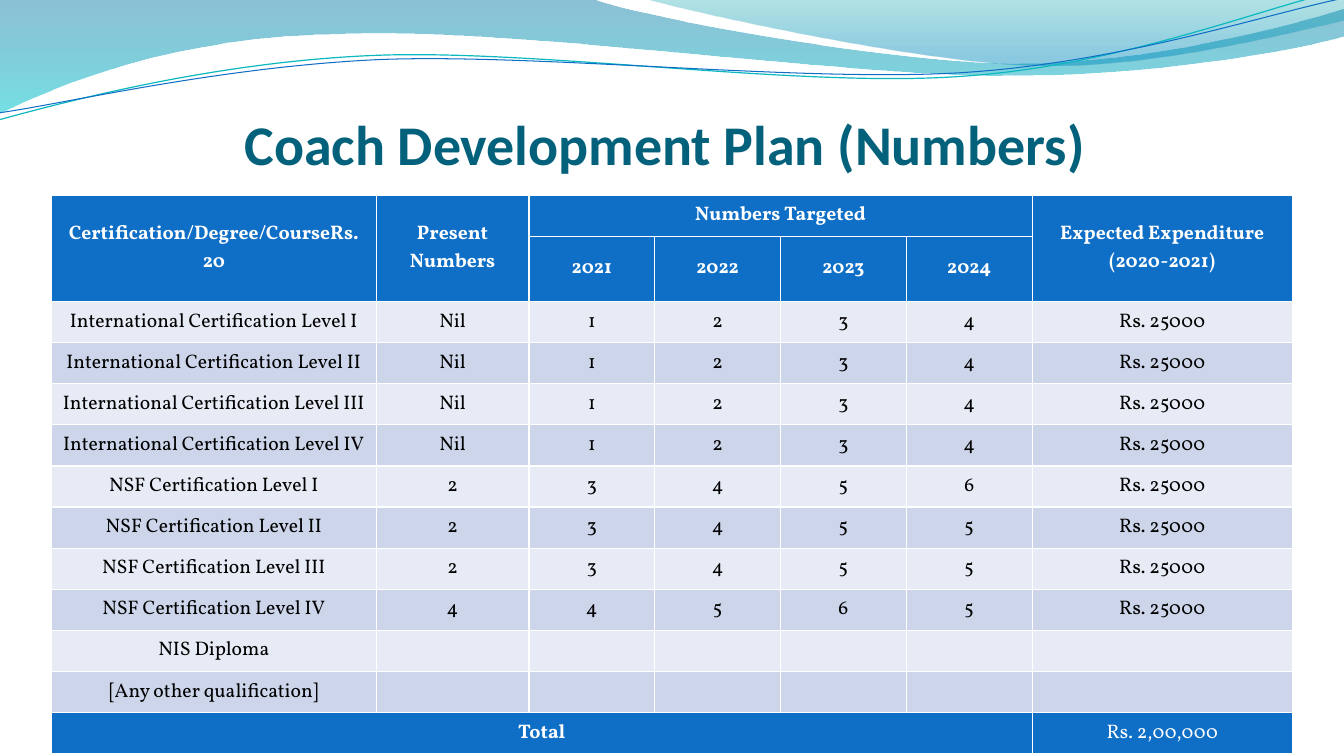
import math
import pptx
import pptx.util
import pptx.dml.color
import pptx.enum.text
import pptx.oxml.ns
import lxml.etree

Cm, Pt = pptx.util.Cm, pptx.util.Pt
qn = pptx.oxml.ns.qn
ANCHOR = pptx.enum.text.MSO_ANCHOR

# Content
TITLE = "Coach Development Plan (Numbers)"
HEAD = ["Certification/Degree/CourseRs. 20", "Present Numbers", "Numbers Targeted",
        "", "", "", "Expected Expenditure\v(2020-2021)"]
YEARS = ["", "", "2021", "2022", "2023", "2024", ""]
COST = "Rs. 25000"
LEVELS = ["I", "II", "III", "IV"]
COUNTS = {
    "International": ["Nil 1 2 3 4"] * 4,
    "NSF": ["2 3 4 5 6", "2 3 4 5 5", "2 3 4 5 5", "4 4 5 6 5"],
}
OTHER = ["NIS Diploma", "[Any other qualification]"]
TOTAL = ["Total", "", "", "", "", "", "Rs. 2,00,000"]

BLUE, WHITE, BLACK, TEAL = "0F6FC6", "FFFFFF", "000000", "04617B"
BANDS = ["E7EBF5", "CCD5EA"]
COLS = [8.18, 3.85, 3.17, 3.17, 3.17, 3.17, 6.56]
ROW, YEAR_ROW = 13.47 / 13, 1.64

# Waves in cm: a start, then line ends (2 numbers) or curves (6 numbers)
FILLS = [
    ([(0, 0), (14.91, -0.03), (16.1, 0.43, 22.48, 1.6, 25.68, 1.6),
      (28.91, 1.6, 32.46, 0.66, 33.86, 0.23), (33.91, 0.91),
      (33.3, 1.12, 29.46, 1.93, 25.25, 1.91), (21.06, 1.91, 12.93, 0.71, 8.71, 0.86),
      (4.37, 0.91, 1.55, 2.11, -0.03, 2.87), (0, 0)],
     [(0, "0074A1", 45), (1, "00C6CF", 55)]),
    ([(16.23, -0.03), (17.25, 0.28, 23.09, 1.57, 26.04, 1.65),
      (28.98, 1.75, 32.56, 0.81, 33.86, 0.53), (33.86, 0), (16.23, -0.03)],
     [(0, "00A1A9", 30), (0.8, "008BBF", 45)]),
]
TILT = -2.7
LINES = [
    ([(-0.03, 3.02), (1.63, 2.57, 5.36, 1.57, 9.37, 1.4),
      (13.39, 1.22, 20.07, 2.21, 24.13, 1.93), (28.19, 1.68, 31.8, 0.2, 33.81, -0.25)],
     (16.89, 1.46), "0AB8BF", 0.85),
    ([(0, 2.84), (1.6, 2.62, 5.54, 1.68, 9.6, 1.5),
      (13.64, 1.35, 20.22, 2.08, 24.26, 1.83), (28.32, 1.57, 31.88, 0.36, 33.88, -0.05)],
     (16.94, 1.5), BLUE, 0.75),
]


def rgb(code):
    return pptx.dml.color.RGBColor.from_string(code)


def write(frame, text, font="Vollkorn", size=14, color=BLACK, bold=False, before=0, after=0):
    para = frame.paragraphs[0]
    para.text = text
    para.alignment = pptx.enum.text.PP_ALIGN.CENTER
    para.space_before, para.space_after = Pt(before), Pt(after)
    for run in para.runs:
        run.font.name, run.font.size, run.font.bold = font, Pt(size), bold
        run.font.color.rgb = rgb(color)


def turn(steps, mid, angle):
    """Rotate each point of the steps around mid."""
    cos, sin = math.cos(math.radians(angle)), math.sin(math.radians(angle))
    done = []
    for step in steps:
        spots = []
        for x, y in zip(step[::2], step[1::2]):
            dx, dy = x - mid[0], y - mid[1]
            spots += [mid[0] + dx * cos - dy * sin, mid[1] + dx * sin + dy * cos]
        done.append(tuple(spots))
    return done


def wave(shapes, steps, close):
    """Lay out all points as lines, then join each three of a curve."""
    points = [(Cm(x), Cm(y)) for step in steps for x, y in zip(step[::2], step[1::2])]
    pen = shapes.build_freeform(*points[0], scale=1.0)
    pen.add_line_segments(points[1:], close=close)
    shape = pen.convert_to_shape()
    shape.shadow.inherit = False
    parts = iter(list(shape._element.iter(qn("a:lnTo"))))
    for step in steps[1:]:
        first = next(parts)
        if len(step) == 6:
            curve = lxml.etree.Element(qn("a:cubicBezTo"))
            first.addprevious(curve)
            for part in (first, next(parts), next(parts)):
                curve.append(part[0])
                part.getparent().remove(part)
    return shape


def paint(cell, color):
    cell.fill.solid()
    cell.fill.fore_color.rgb = rgb(color)
    props = cell._tc.get_or_add_tcPr()
    for i, side in enumerate(["a:lnL", "a:lnR", "a:lnT", "a:lnB"]):
        line = lxml.etree.Element(qn(side), w=str(Pt(1)))
        solid = lxml.etree.SubElement(line, qn("a:solidFill"))
        lxml.etree.SubElement(solid, qn("a:srgbClr"), val=WHITE)
        props.insert(i, line)


deck = pptx.Presentation()
deck.slide_width, deck.slide_height = Cm(33.87), Cm(19.05)
slide = deck.slides.add_slide(deck.slide_layouts[5])
shapes = slide.shapes

# Waves
for steps, stops in FILLS:
    shape = wave(shapes, steps, True)
    shape.line.fill.background()
    shape.fill.gradient()
    shape.fill.gradient_angle = 270
    for stop, (place, color, _) in zip(shape.fill.gradient_stops, stops):
        stop.position, stop.color.rgb = place, rgb(color)
    tints = list(shape._element.spPr.iter(qn("a:srgbClr")))
    for tint, (_, _, alpha) in zip(tints, stops):
        lxml.etree.SubElement(tint, qn("a:alpha"), val=str(alpha * 1000))
for steps, mid, color, width in LINES:
    shape = wave(shapes, turn(steps, mid, -TILT), False)
    shape.rotation = TILT
    shape.fill.background()
    shape.line.color.rgb, shape.line.width = rgb(color), Pt(width)

# Title, in front of the waves
title = shapes.title
shapes._spTree.append(title._element)
title.left, title.top, title.width, title.height = Cm(1.75), Cm(1.96), Cm(30), Cm(2.49)
frame = title.text_frame
frame.auto_size = pptx.enum.text.MSO_AUTO_SIZE.NONE
frame.vertical_anchor = ANCHOR.BOTTOM
frame.margin_left = frame.margin_right = frame.margin_bottom = 0
frame.margin_top = Cm(0.13)
write(frame, TITLE, font="Calibri", size=40, color=TEAL, bold=True)

# Table
rows = [HEAD, YEARS]
for body, counts in COUNTS.items():
    rows += [[f"{body} Certification Level {level}", *count.split(), COST]
             for level, count in zip(LEVELS, counts)]
rows += [[name] + [""] * 6 for name in OTHER] + [TOTAL]
last = len(rows) - 1

grid = shapes.add_table(len(rows), len(COLS), Cm(1.3), Cm(4.92),
                        Cm(sum(COLS)), Cm(ROW * last + YEAR_ROW)).table
grid.first_row = grid.horz_banding = False
for col, width in zip(grid.columns, COLS):
    col.width = Cm(width)
for r, row in enumerate(rows):
    grid.rows[r].height = Cm(YEAR_ROW if r == 1 else ROW)
    for c, text in enumerate(row):
        cell = grid.cell(r, c)
        dark = r < 2 or r == last
        paint(cell, BLUE if dark else BANDS[r % 2])
        cell.vertical_anchor = ANCHOR.MIDDLE
        spaced = r != last and (c == 0 or r < 2) and text not in ("", "Numbers Targeted")
        tight = spaced and c < 6
        cell.margin_left = cell.margin_right = Cm(0.13 if tight else 0.25)
        cell.margin_top = cell.margin_bottom = Cm(0 if tight or not text else 0.13)
        write(cell.text_frame, text, color=WHITE if dark else BLACK,
              bold=dark and text != TOTAL[-1],
              before=5 if spaced else 0, after=10 if spaced else 0)

# Merged cells
for top, left, bottom, right in [(0, 0, 1, 0), (0, 1, 1, 1), (0, 2, 0, 5),
                                 (0, 6, 1, 6), (last, 0, last, 5)]:
    grid.cell(top, left).merge(grid.cell(bottom, right))

deck.save("out.pptx")
